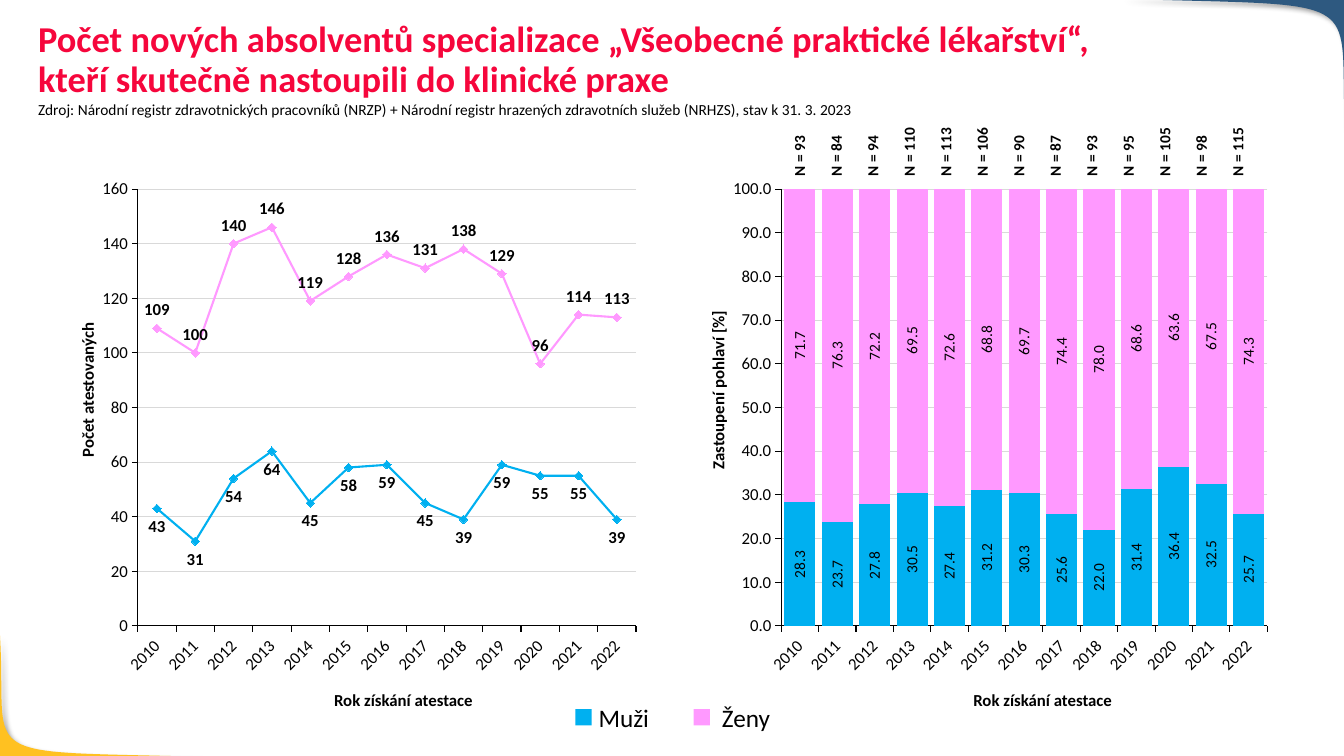
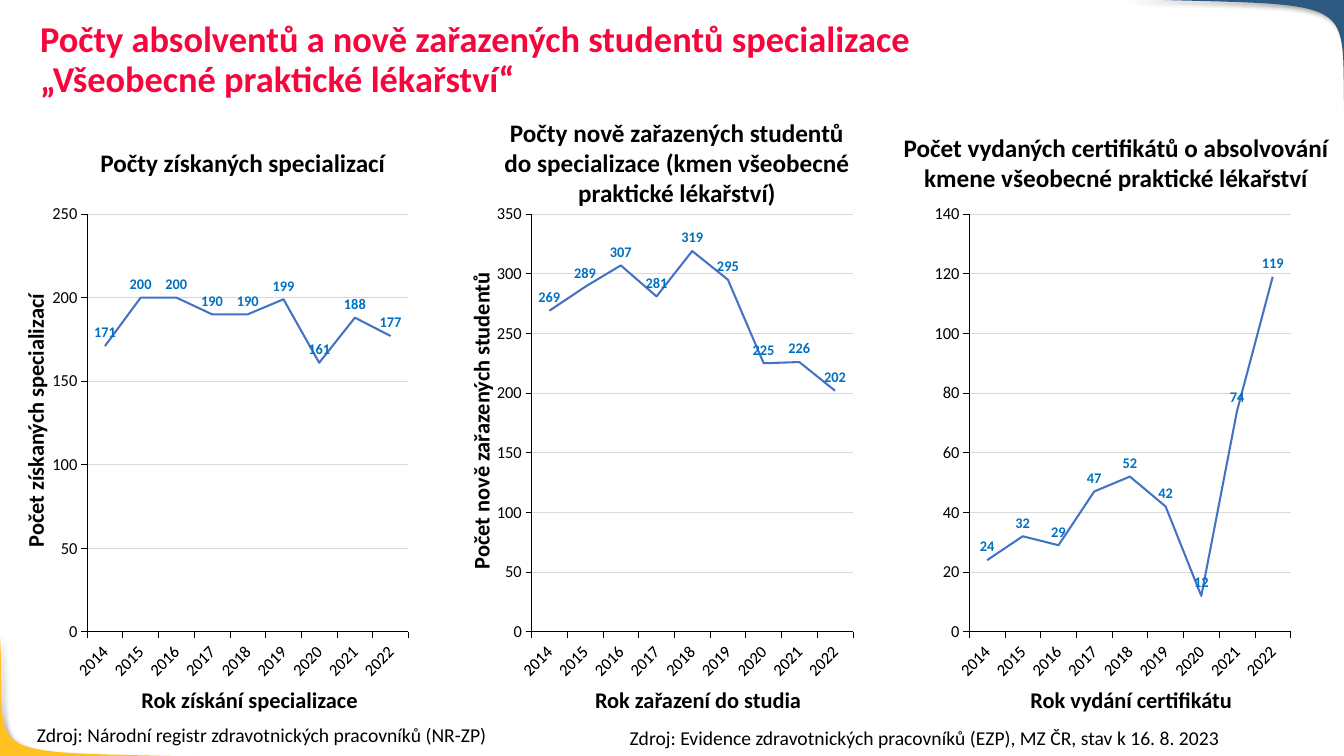
from dataclasses import dataclass
from typing import Optional

from lxml.etree import SubElement
from pptx import Presentation
from pptx.chart.data import CategoryChartData
from pptx.dml.color import RGBColor
from pptx.enum.chart import XL_CHART_TYPE as ChartType
from pptx.enum.chart import XL_LABEL_POSITION as LabelPosition
from pptx.enum.chart import XL_MARKER_STYLE as MarkerStyle
from pptx.enum.chart import XL_TICK_MARK as TickMark
from pptx.enum.shapes import MSO_SHAPE as Shape
from pptx.enum.text import MSO_ANCHOR as Anchor
from pptx.enum.text import MSO_AUTO_SIZE as AutoSize
from pptx.enum.text import PP_ALIGN as Align
from pptx.oxml import parse_xml
from pptx.oxml.ns import nsdecls, qn
from pptx.util import Cm, Pt

FONT = "Calibri"
BLACK, RED, GRID = "000000", "F6063C", "D9D9D9"
YELLOW, NAVY = "FFC121", "2E5980"
MEN, WOMEN = "00B0F0", "FF99FF"
TREND, TREND_LABEL = "4472C4", "0070C0"

Box = tuple[float, float, float, float]
Point = tuple[float, float]


@dataclass(frozen=True)
class Corner:
    curve: tuple[Point, Point, Point, Point]
    tip: Point
    color: str


@dataclass(frozen=True)
class Series:
    name: str
    values: list[float]
    color: str
    label_position: Optional[LabelPosition] = None


@dataclass(frozen=True)
class ChartStyle:
    kind: ChartType
    plot: Box
    maximum: float
    unit: float
    axis_width: float
    label_size: float
    label_color: str = BLACK
    label_bold: bool = True
    label_turn: int = 0
    number_format: str = "General"


@dataclass(frozen=True)
class Panel:
    heading: str
    heading_box: Box
    chart_left: float
    values: list[float]
    maximum: float
    unit: float
    x_title: str
    x_left: float
    x_width: float
    y_title: str = ""
    y_left: float = 0
    y_width: float = 0


CORNERS = [
    Corner(((5.41, 19.08), (-0.86, 18.9), (0.2, 19.28), (0, 16)), (-0.03, 19.08), YELLOW),
    Corner(((28.22, -0.03), (34.8, 0.18), (33.68, -0.25), (33.91, 3.61)), (33.91, -0.03), NAVY),
]


def rgb(color: str) -> RGBColor:
    return RGBColor.from_string(color)


def set_font(font, size: float, color: str = BLACK, bold: bool = False) -> None:
    font.name, font.size, font.bold = FONT, Pt(size), bold
    font.color.rgb = rgb(color)


def set_line(line, color: str, width: float) -> None:
    line.color.rgb = rgb(color)
    line.width = Pt(width)


def fill_plain(shape, color: str) -> None:
    shape.shadow.inherit = False
    shape.fill.solid()
    shape.fill.fore_color.rgb = rgb(color)
    shape.line.fill.background()


def write(frame, text: str, size: float, color: str = BLACK, bold: bool = False,
          align: Align = Align.LEFT, spacing: Optional[float] = None) -> None:
    """Fill a text frame, one paragraph for each line of the text."""
    for index, line in enumerate(text.split("\n")):
        paragraph = frame.add_paragraph() if index else frame.paragraphs[0]
        paragraph.alignment = align
        paragraph.line_spacing = spacing
        run = paragraph.add_run()
        run.text = line
        set_font(run.font, size, color, bold)


def add_text(slide, box: Box, text: str, size: float, wrap: bool = True, grow: bool = True,
             turn: int = 0, anchor: Anchor = Anchor.TOP, **text_format) -> None:
    label = slide.shapes.add_textbox(*map(Cm, box))
    label.rotation = turn
    frame = label.text_frame
    frame.word_wrap = wrap
    frame.auto_size = AutoSize.SHAPE_TO_FIT_TEXT if grow else AutoSize.NONE
    frame.vertical_anchor = anchor
    write(frame, text, size, **text_format)


def add_axis_title(slide, box: Box, text: str, size: float, turn: int = 0) -> None:
    add_text(slide, box, text, size, wrap=False, turn=turn, bold=True, align=Align.CENTER)


def curve_points(curve, steps: int = 40) -> list[Point]:
    """Sample a cubic Bézier curve, without its first point."""
    weights = [((1 - t) ** 3, 3 * t * (1 - t) ** 2, 3 * t * t * (1 - t), t ** 3)
               for t in (step / steps for step in range(1, steps + 1))]
    return [tuple(sum(w * point[axis] for w, point in zip(weight, curve)) for axis in (0, 1))
            for weight in weights]


def add_corner(slide, corner: Corner) -> None:
    builder = slide.shapes.build_freeform(*map(Cm, corner.curve[0]))
    outline = curve_points(corner.curve) + [corner.tip]
    builder.add_line_segments([(Cm(x), Cm(y)) for x, y in outline], close=True)
    shape = builder.convert_to_shape()
    fill_plain(shape, corner.color)
    effects = shape._element.spPr.find(qn("a:effectLst"))
    shadow = SubElement(effects, qn("a:outerShdw"), blurRad=str(Pt(4)), dist=str(Pt(3)),
                        dir="2700000", algn="tl", rotWithShape="0")
    tint = SubElement(shadow, qn("a:srgbClr"), val=BLACK)
    SubElement(tint, qn("a:alpha"), val="40000")


def new_slide(deck, title: str, left: float):
    slide = deck.slides.add_slide(deck.slide_layouts[6])
    for corner in CORNERS:
        add_corner(slide, corner)
    add_text(slide, (left, 0.45, 32.6, 2.16), title, 26, grow=False, anchor=Anchor.MIDDLE,
             color=RED, bold=True, spacing=0.9)
    return slide


def turn_labels(labelled, degrees: int) -> None:
    labelled._element.find(".//" + qn("a:bodyPr")).set("rot", str(degrees * 60000))


def place_plot(chart, plot: Box) -> None:
    """Fix the inner plot area, in fractions of the chart."""
    area = chart._chartSpace.chart.plotArea
    for layout in area.findall(qn("c:layout")):
        area.remove(layout)
    sizes = "".join(f'<c:{key} val="{value}"/>' for key, value in zip("xywh", plot))
    area.insert(0, parse_xml(
        f'<c:layout {nsdecls("c")}><c:manualLayout><c:layoutTarget val="inner"/>'
        f'<c:xMode val="edge"/><c:yMode val="edge"/>{sizes}</c:manualLayout></c:layout>'))


def style_axes(chart, style: ChartStyle) -> None:
    for axis in (chart.category_axis, chart.value_axis):
        axis.major_tick_mark, axis.minor_tick_mark = TickMark.OUTSIDE, TickMark.NONE
        set_line(axis.format.line, BLACK, style.axis_width)
        set_font(axis.tick_labels.font, 12)
    turn_labels(chart.category_axis, -45)
    values = chart.value_axis
    values.minimum_scale, values.maximum_scale = 0, style.maximum
    values.major_unit = style.unit
    values.has_major_gridlines = True
    set_line(values.major_gridlines.format.line, GRID, style.axis_width)
    values.tick_labels.number_format = style.number_format
    values.tick_labels.number_format_is_linked = False


def style_series(drawn, series: Series, style: ChartStyle) -> None:
    if style.kind == ChartType.COLUMN_STACKED:
        drawn.format.fill.solid()
        drawn.format.fill.fore_color.rgb = rgb(series.color)
    else:
        drawn.smooth = False
        set_line(drawn.format.line, series.color, 1.5)
    if style.kind == ChartType.LINE_MARKERS:
        marker = drawn.marker
        marker.style, marker.size = MarkerStyle.DIAMOND, 6
        marker.format.fill.solid()
        marker.format.fill.fore_color.rgb = rgb(series.color)
        set_line(marker.format.line, series.color, 0.75)
    labels = drawn.data_labels
    labels.show_value = True
    labels.number_format, labels.number_format_is_linked = style.number_format, False
    set_font(labels.font, style.label_size, style.label_color, style.label_bold)
    if series.label_position is not None:
        labels.position = series.label_position
    if style.label_turn:
        turn_labels(labels, style.label_turn)


def add_chart(slide, box: Box, years: list[str], series: list[Series], style: ChartStyle) -> None:
    data = CategoryChartData()
    data.categories = years
    for item in series:
        data.add_series(item.name, item.values)
    chart = slide.shapes.add_chart(style.kind, *map(Cm, box), data).chart
    chart.has_title = chart.has_legend = False
    set_font(chart.font, 12)
    plot = chart.plots[0]
    plot.vary_by_categories = False
    if style.kind == ChartType.COLUMN_STACKED:
        plot.gap_width, plot.overlap = 20, 100
    place_plot(chart, style.plot)
    style_axes(chart, style)
    for drawn, item in zip(plot.series, series):
        style_series(drawn, item, style)


def clear_cell(cell) -> None:
    """Leave a table cell without fill and borders."""
    cell.fill.background()
    properties = cell._tc.get_or_add_tcPr()
    for index, edge in enumerate(("lnL", "lnR", "lnT", "lnB")):
        properties.insert(index, parse_xml(f'<a:{edge} {nsdecls("a")} w="0"><a:noFill/></a:{edge}>'))


def add_totals(slide, totals: list[int]) -> None:
    """Draw the row of yearly totals above the columns."""
    widths = [0.92] * len(totals) + [0.83]
    table = slide.shapes.add_table(1, len(widths), Cm(19.89), Cm(2.87),
                                   Cm(sum(widths)), Cm(1.6)).table
    table.first_row = table.horz_banding = False
    for index, width in enumerate(widths):
        table.columns[index].width = Cm(width)
        cell = table.cell(0, index)
        clear_cell(cell)
        if index < len(totals):
            cell.margin_left = cell.margin_top = cell.margin_right = Cm(0.03)
            cell.margin_bottom = 0
            cell.vertical_anchor = Anchor.MIDDLE
            cell._tc.get_or_add_tcPr().set("vert", "vert270")
            write(cell.text_frame, f"N = {totals[index]}", 11, bold=True)


def add_graduates_slide(deck) -> None:
    slide = new_slide(deck, "Počet nových absolventů specializace „Všeobecné praktické lékařství“,\n"
                            "kteří skutečně nastoupili do klinické praxe", 0.71)
    add_text(slide, (0.71, 2.41, 21.82, 0.74),
             "Zdroj: Národní registr zdravotnických pracovníků (NRZP) + Národní registr "
             "hrazených zdravotních služeb (NRHZS), stav k 31. 3. 2023", 11)
    years = [str(year) for year in range(2010, 2023)]
    men_share = [28.3, 23.7, 27.8, 30.5, 27.4, 31.2, 30.3, 25.6, 22, 31.4, 36.4, 32.5, 25.7]
    women_share = [round(100 - share, 1) for share in men_share]
    add_chart(slide, (18.19, 4.27, 14, 13), years,
              [Series("Muži", men_share, MEN), Series("Ženy", women_share, WOMEN)],
              ChartStyle(ChartType.COLUMN_STACKED, (0.107, 0.038, 0.875, 0.847), 100, 10, 0.75, 11,
                         label_bold=False, label_turn=-90, number_format="0.0"))
    men = [43, 31, 54, 64, 45, 58, 59, 45, 39, 59, 55, 55, 39]
    women = [109, 100, 140, 146, 119, 128, 136, 131, 138, 129, 96, 114, 113]
    add_chart(slide, (2.31, 4.27, 14, 13), years,
              [Series("Muži", men, MEN, LabelPosition.BELOW),
               Series("Ženy", women, WOMEN, LabelPosition.ABOVE)],
              ChartStyle(ChartType.LINE_MARKERS, (0.083, 0.038, 0.897, 0.847), 160, 20, 0.75, 12))
    for left in (8.15, 24.26):
        add_axis_title(slide, (left, 17.25, 4.04, 0.76), "Rok získání atestace", 12)
    add_axis_title(slide, (0.23, 9.45, 3.94, 0.76), "Počet atestovaných", 12, turn=270)
    add_axis_title(slide, (15.8, 9.45, 4.57, 0.76), "Zastoupení pohlaví [%]", 12, turn=270)
    add_totals(slide, [93, 84, 94, 110, 113, 106, 90, 87, 93, 95, 105, 98, 115])
    for name, color, key_left, name_left in (("Muži", MEN, 14.5, 14.5), ("Ženy", WOMEN, 17.48, 17.58)):
        key = slide.shapes.add_shape(Shape.RECTANGLE, Cm(key_left), Cm(17.87), Cm(0.41), Cm(0.41))
        fill_plain(key, color)
        add_text(slide, (name_left, 17.58, 2.44, 1.02), name, 18, align=Align.CENTER)


PANELS = [
    Panel("Počty získaných specializací", (1.27, 3.58, 9.7, 1.02), 1.32,
          [171, 200, 200, 190, 190, 199, 161, 188, 177], 250, 50,
          "Rok získání specializace", 3.28, 6.02, "Počet získaných specializací", -2.59, 6.96),
    Panel("Počty nově zařazených studentů\ndo specializace (kmen všeobecné praktické lékařství)",
          (12.07, 2.82, 9.98, 2.57), 12.52, [269, 289, 307, 281, 319, 295, 225, 226, 202], 350, 50,
          "Rok zařazení do studia", 14.71, 5.77, "Počet nově zařazených studentů", 8.08, 8.08),
    Panel("Počet vydaných certifikátů o absolvování kmene všeobecné praktické lékařství",
          (22.5, 3.2, 11.25, 1.8), 23.55, [24, 32, 29, 47, 52, 42, 12, 74, 119], 140, 20,
          "Rok vydání certifikátu", 25.68, 5.66),
]


def add_panel(slide, panel: Panel, years: list[str]) -> None:
    style = ChartStyle(ChartType.LINE, (0.075, 0.035, 0.898, 0.827), panel.maximum, panel.unit,
                       0.5, 10.5, label_color=TREND_LABEL)
    add_chart(slide, (panel.chart_left, 4.95, 9.22, 12.73), years,
              [Series("Počet", panel.values, TREND, LabelPosition.ABOVE)], style)
    add_text(slide, panel.heading_box, panel.heading, 18, bold=True, align=Align.CENTER)
    add_axis_title(slide, (panel.x_left, 17.17, panel.x_width, 0.94), panel.x_title, 16)
    if panel.y_title:
        add_axis_title(slide, (panel.y_left, 10.13, panel.y_width, 0.94), panel.y_title, 16, turn=270)


def add_students_slide(deck) -> None:
    slide = new_slide(deck, "Počty absolventů a nově zařazených studentů specializace\n"
                            "„Všeobecné praktické lékařství“", 0.76)
    years = [str(year) for year in range(2014, 2023)]
    for panel in PANELS:
        add_panel(slide, panel, years)
    add_text(slide, (15.62, 18.16, 15.72, 0.86),
             "Zdroj: Evidence zdravotnických pracovníků (EZP), MZ ČR, stav k 16. 8. 2023", 14)
    add_text(slide, (0.58, 18.08, 12.04, 0.86),
             "Zdroj: Národní registr zdravotnických pracovníků (NR-ZP)", 14,
             wrap=False, align=Align.CENTER)


def main() -> None:
    deck = Presentation()
    deck.slide_width, deck.slide_height = Cm(33.87), Cm(19.05)
    add_graduates_slide(deck)
    add_students_slide(deck)
    deck.save("out.pptx")


if __name__ == "__main__":
    main()
